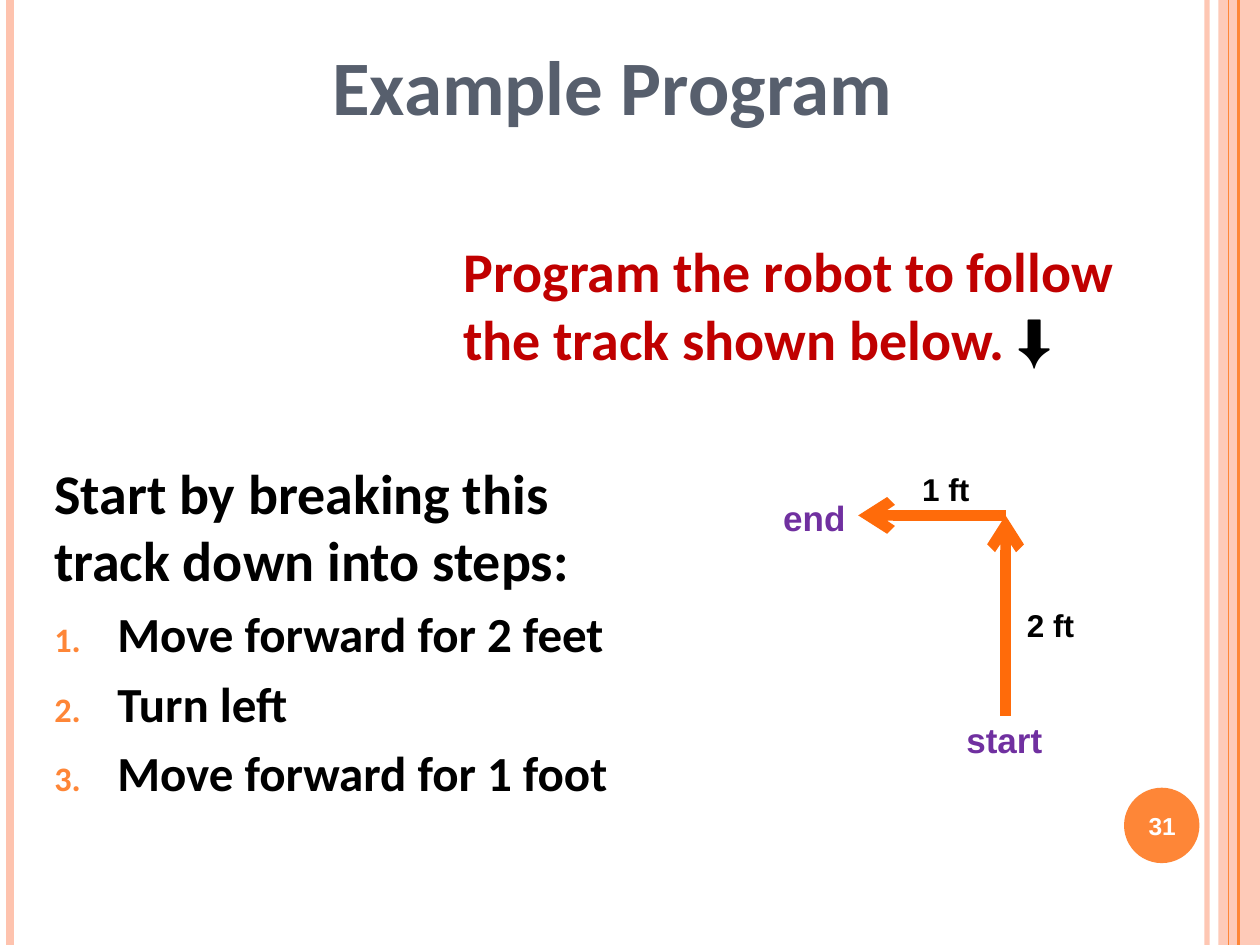
"""Build the "Example Program" slide: a robot track and its steps."""
from lxml import etree
from pptx import Presentation
from pptx.dml.color import RGBColor
from pptx.enum.shapes import MSO_CONNECTOR, MSO_SHAPE
from pptx.enum.text import MSO_ANCHOR, MSO_AUTO_SIZE, PP_ALIGN
from pptx.oxml.ns import qn
from pptx.util import Cm, Pt

STRAIGHT = MSO_CONNECTOR.STRAIGHT
RECT, OVAL = MSO_SHAPE.RECTANGLE, MSO_SHAPE.OVAL
TOP, MIDDLE, BOTTOM = MSO_ANCHOR.TOP, MSO_ANCHOR.MIDDLE, MSO_ANCHOR.BOTTOM
FIXED, GROW = MSO_AUTO_SIZE.NONE, MSO_AUTO_SIZE.SHAPE_TO_FIT_TEXT
LEFT, CENTER = PP_ALIGN.LEFT, PP_ALIGN.CENTER

WIDTH, HEIGHT = 25.4, 19.05
ORANGE, PEACH, TRACK = "FE8637", "FEC3AE", "FF6B0A"
BLACK, WHITE, RED, PURPLE, SLATE = "000000", "FFFFFF", "C00000", "7030A0", "575F6D"

TITLE = "Example Program"
INTRO = ["Start by breaking this", "track down into steps:"]
STEPS = ["Move forward for 2 feet", "Turn left", "Move forward for 1 foot"]
PROMPT = [("Program the robot to follow the track shown below. ", RED), ("⬇", BLACK)]
PAGE = "31"

RAILS = [(24.33, PEACH, 3, 93), (0.2, PEACH, 4.5, 100),
         (24.97, ORANGE, 1.5, 100), (24.77, ORANGE, 0.75, 100)]
BAND = (24.56, 0, 0.84, HEIGHT)
BADGE = (22.66, 15.88, 1.52, 1.52)
TRACK_POINTS = [(20.27, 14.43), (20.27, 10.39), (17.3, 10.39)]
LABELS = [("1 ft", (18.34, 9.35, 1.47, 1.02), 18, BLACK),
          ("2 ft", (20.45, 12.09, 1.47, 1.02), 18, BLACK),
          ("start", (19.23, 14.35, 2.06, 1.12), 20, PURPLE),
          ("end", (15.54, 9.88, 1.78, 1.12), 20, PURPLE)]


def paint(fmt, color, alpha=100):
    fmt.solid()
    fmt.fore_color.rgb = RGBColor.from_string(color)
    if alpha < 100:
        clr = fmt._xPr.find(".//" + qn("a:srgbClr"))
        etree.SubElement(clr, qn("a:alpha"), val=str(alpha * 1000))


def add_line(s, start, end, color, width, alpha=100, arrow=False):
    line = s.shapes.add_connector(STRAIGHT, *map(Cm, start + end))
    line.line.width = Pt(width)
    paint(line.line.fill, color, alpha)
    if arrow:
        etree.SubElement(line.line._get_or_add_ln(), qn("a:tailEnd"), type="arrow")
    etree.SubElement(line._element.spPr, qn("a:effectLst"))


def add_shape(s, kind, box, color, alpha=100):
    sp = s.shapes.add_shape(kind, *map(Cm, box))
    sp.shadow.inherit = False
    paint(sp.fill, color, alpha)
    sp.line.fill.background()


def add_run(p, text, size, color, font="Calibri"):
    r = p.add_run()
    r.text = text
    r.font.size, r.font.name, r.font.bold = Pt(size), font, True
    paint(r.font.fill, color)


def set_frame(sp, box, anchor=TOP, align=LEFT, wrap=True, fit=FIXED):
    sp.left, sp.top, sp.width, sp.height = map(Cm, box)
    tf = sp.text_frame
    tf.word_wrap, tf.auto_size, tf.vertical_anchor = wrap, fit, anchor
    p = tf.paragraphs[0]
    p.alignment = align
    return tf, p


def add_text(s, box, **frame):
    return set_frame(s.shapes.add_textbox(*map(Cm, box)), box, **frame)[1]


def set_list(p, indent, numbered):
    p.space_before = Pt(6)
    pPr = p._p.get_or_add_pPr()
    pPr.set("marL", str(Cm(indent)))
    pPr.set("indent", str(-Cm(indent)))
    if not numbered:
        etree.SubElement(pPr, qn("a:buNone"))
        return
    clr = etree.SubElement(pPr, qn("a:buClr"))
    etree.SubElement(clr, qn("a:srgbClr"), val=ORANGE)
    etree.SubElement(pPr, qn("a:buSzPct"), val="70000")
    etree.SubElement(pPr, qn("a:buFont"), typeface="+mj-lt")
    etree.SubElement(pPr, qn("a:buAutoNum"), type="arabicPeriod")


def add_body(sp):
    tf, p = set_frame(sp, (0.84, 9.12, 13.69, 7.8))
    set_list(p, 0, False)
    for i, text in enumerate(INTRO):
        if i:
            p.add_line_break()
        add_run(p, text, 32, BLACK)
    for text in STEPS:
        p = tf.add_paragraph()
        set_list(p, 1.27, True)
        add_run(p, text, 28, BLACK)


def main():
    prs = Presentation()
    prs.slide_width, prs.slide_height = Cm(WIDTH), Cm(HEIGHT)
    s = prs.slides.add_slide(prs.slide_layouts[1])
    paint(s.background.fill, WHITE)

    add_shape(s, RECT, BAND, PEACH, 87)
    for x, color, width, alpha in RAILS:
        add_line(s, (x, 0), (x, HEIGHT), color, width, alpha)
    add_shape(s, OVAL, BADGE, ORANGE)

    title, body = s.placeholders
    p = set_frame(title, (0.43, 0.76, 23.85, 2.01), BOTTOM, CENTER)[1]
    add_run(p, TITLE, 44, SLATE)
    add_body(body)

    p = add_text(s, (22.58, 15.93, 1.7, 1.45), anchor=MIDDLE, align=CENTER)
    add_run(p, PAGE, 14, WHITE, "Arial")

    for start, end in zip(TRACK_POINTS, TRACK_POINTS[1:]):
        add_line(s, start, end, TRACK, 6, arrow=True)
    for text, box, size, color in LABELS:
        p = add_text(s, box, wrap=False, fit=GROW)
        add_run(p, text, size, color, "Arial")

    p = add_text(s, (9.09, 4.65, 13.69, 3.45))
    p.space_before = Pt(6)
    for text, color in PROMPT:
        add_run(p, text, 32, color)

    prs.save("out.pptx")


if __name__ == "__main__":
    main()
